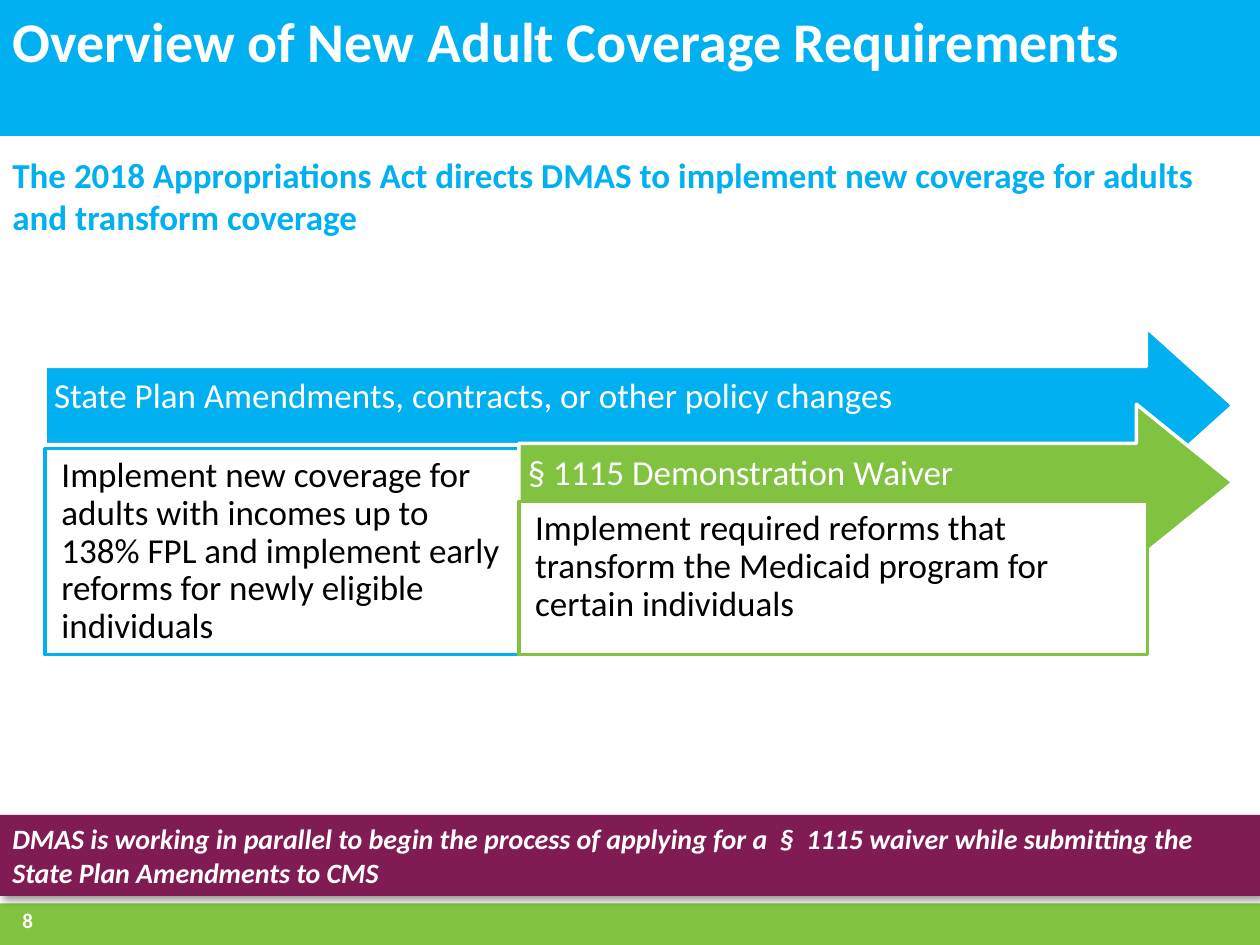
from dataclasses import dataclass

from lxml.etree import SubElement
from pptx import Presentation
from pptx.dml.color import RGBColor
from pptx.enum.shapes import MSO_SHAPE
from pptx.enum.text import MSO_ANCHOR, PP_ALIGN
from pptx.oxml.ns import qn
from pptx.shapes.autoshape import Shape
from pptx.slide import Slide
from pptx.util import Cm, Pt

BLUE = RGBColor(0x00, 0xB0, 0xF0)
GREEN = RGBColor(0x81, 0xC3, 0x41)
PLUM = RGBColor(0x81, 0x1B, 0x53)
WHITE = RGBColor(0xFF, 0xFF, 0xFF)
BLACK = RGBColor(0x00, 0x00, 0x00)
FONT_NAME = "Calibri"
PAGE_WIDTH = 25.4
PAGE_HEIGHT = 19.05
ARROW_HEIGHT = 3.15
ARROW_RIGHT = 24.86
PANEL_BOTTOM = 13.2
DEFAULT_INSETS = (0.25, 0.13, 0.25, 0.13)
ARROW_INSETS = (0.18, 0.23, 0, 0.56)
PANEL_INSETS = (0.33, 0.18, 0.18, 0.18)


@dataclass(frozen=True)
class Step:
    heading: str
    detail: str
    color: RGBColor
    left: float
    arrow_top: float
    head_length: float
    panel_top: float
    panel_width: float


STEPS = [
    Step(
        "State Plan Amendments, contracts, or other policy changes",
        "Implement new coverage for adults with incomes up to 138% FPL and "
        "implement early reforms for newly eligible individuals",
        BLUE, 0.91, 6.6, 1.75, 9.04, 9.55,
    ),
    Step(
        "§ 1115 Demonstration Waiver",
        "Implement required reforms that transform the Medicaid program for "
        "certain individuals",
        GREEN, 10.46, 8.15, 1.95, 10.11, 12.67,
    ),
]


def write_text(
    box: Shape,
    text: str,
    *,
    size: float,
    color: RGBColor,
    bold: bool = False,
    italic: bool = False,
    anchor: MSO_ANCHOR = MSO_ANCHOR.TOP,
    insets: tuple[float, float, float, float] = DEFAULT_INSETS,
    line_spacing: float = 1.0,
) -> None:
    frame = box.text_frame
    frame.word_wrap = True
    frame.vertical_anchor = anchor
    frame.margin_left, frame.margin_top, frame.margin_right, frame.margin_bottom = (
        Cm(inset) for inset in insets
    )
    para = frame.paragraphs[0]
    para.alignment = PP_ALIGN.LEFT
    para.line_spacing = line_spacing
    span = para.add_run()
    span.text = text
    span.font.name = FONT_NAME
    span.font.size = Pt(size)
    span.font.bold = bold
    span.font.italic = italic
    span.font.color.rgb = color


def add_box(
    page: Slide,
    kind: MSO_SHAPE,
    left: float,
    top: float,
    width: float,
    height: float,
    fill: RGBColor,
    line: RGBColor | None = None,
) -> Shape:
    box = page.shapes.add_shape(kind, Cm(left), Cm(top), Cm(width), Cm(height))
    box.shadow.inherit = False
    box.fill.solid()
    box.fill.fore_color.rgb = fill
    if line is None:
        box.line.fill.background()
    else:
        box.line.color.rgb = line
        box.line.width = Pt(2)
    return box


def add_text_box(
    page: Slide, left: float, top: float, width: float, height: float
) -> Shape:
    return page.shapes.add_textbox(Cm(left), Cm(top), Cm(width), Cm(height))


def add_shadow(effects, blur: float, distance: float, angle: int, opacity: int) -> None:
    shadow = SubElement(
        effects, qn("a:outerShdw"), blurRad=str(Pt(blur)), dist=str(Pt(distance)),
        dir=str(angle * 60000), algn="tl", rotWithShape="0",
    )
    tint = SubElement(shadow, qn("a:srgbClr"), val=str(BLACK))
    SubElement(tint, qn("a:alpha"), val=str(opacity * 1000))


def add_step(page: Slide, step: Step) -> None:
    arrow = add_box(
        page, MSO_SHAPE.RIGHT_ARROW, step.left, step.arrow_top,
        ARROW_RIGHT - step.left, ARROW_HEIGHT, step.color, WHITE,
    )
    arrow.adjustments[0] = 0.5
    arrow.adjustments[1] = step.head_length / ARROW_HEIGHT
    write_text(
        arrow, step.heading, size=20, color=WHITE, anchor=MSO_ANCHOR.MIDDLE,
        insets=ARROW_INSETS, line_spacing=0.9,
    )
    panel = add_box(
        page, MSO_SHAPE.RECTANGLE, step.left, step.panel_top,
        step.panel_width, PANEL_BOTTOM - step.panel_top, WHITE, step.color,
    )
    write_text(
        panel, step.detail, size=20, color=BLACK,
        insets=PANEL_INSETS, line_spacing=0.9,
    )


def add_title(page: Slide) -> None:
    title = page.shapes.title
    title.left, title.top, title.width, title.height = Cm(0), Cm(0), Cm(25.58), Cm(2.84)
    write_text(
        title, "Overview of New Adult Coverage Requirements",
        size=32, color=WHITE, bold=True,
    )
    properties = title.text_frame.paragraphs[0].runs[0].font._element
    effects = SubElement(properties, qn("a:effectLst"))
    properties.find(qn("a:solidFill")).addnext(effects)
    add_shadow(effects, blur=3, distance=3, angle=45, opacity=45)
    tree = page.shapes._spTree
    tree.append(title._element)


def main() -> None:
    deck = Presentation()
    deck.slide_width, deck.slide_height = Cm(PAGE_WIDTH), Cm(PAGE_HEIGHT)
    page = deck.slides.add_slide(deck.slide_layouts[5])

    add_box(page, MSO_SHAPE.RECTANGLE, 0, 18.21, PAGE_WIDTH, 0.84, GREEN)
    add_box(page, MSO_SHAPE.RECTANGLE, 0, 0, PAGE_WIDTH, 2.74, BLUE)
    for step in STEPS:
        add_step(page, step)
    add_title(page)

    write_text(
        add_text_box(page, 0.2, 18.03, 3.61, 1.02), "8",
        size=12, color=WHITE, bold=True, anchor=MSO_ANCHOR.MIDDLE,
    )
    write_text(
        add_text_box(page, 0, 2.97, PAGE_WIDTH, 1.96),
        "The 2018 Appropriations Act directs DMAS to implement new coverage "
        "for adults and transform coverage",
        size=20, color=BLUE, bold=True,
    )
    banner = add_box(page, MSO_SHAPE.RECTANGLE, 0, 16.43, PAGE_WIDTH, 1.63, PLUM)
    add_shadow(
        banner._element.spPr.find(qn("a:effectLst")),
        blur=4, distance=3, angle=45, opacity=40,
    )
    write_text(
        banner,
        "DMAS is working in parallel to begin the process of applying for a  §  1115 "
        "waiver while submitting the State Plan Amendments to CMS",
        size=16, color=WHITE, bold=True, italic=True, anchor=MSO_ANCHOR.MIDDLE,
    )
    deck.save("out.pptx")


if __name__ == "__main__":
    main()
